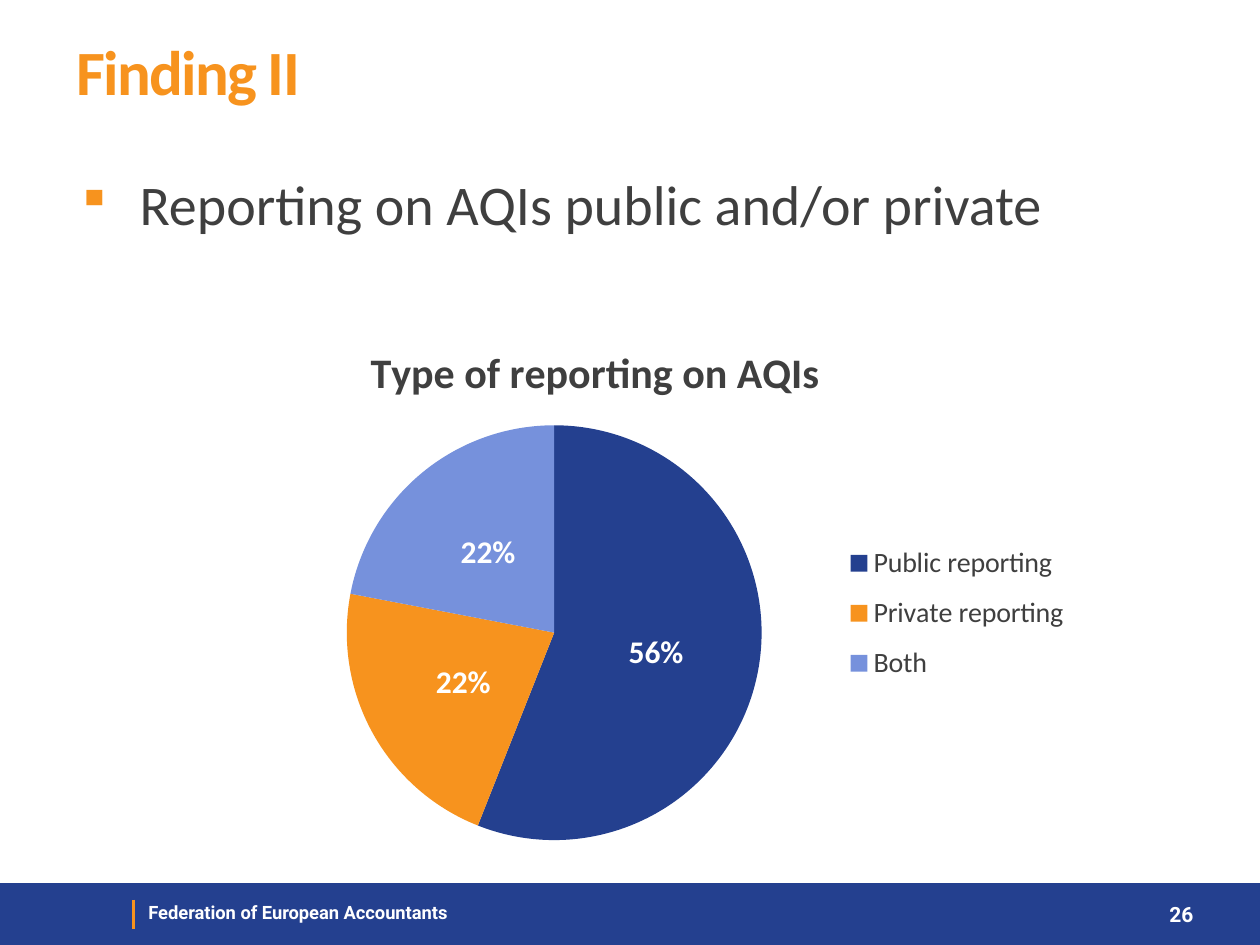
from dataclasses import dataclass

from lxml.etree import SubElement
from pptx import Presentation
from pptx.chart.data import CategoryChartData
from pptx.dml.color import RGBColor
from pptx.enum.chart import XL_CHART_TYPE as ChartType
from pptx.enum.chart import XL_LABEL_POSITION as LabelPosition
from pptx.enum.chart import XL_LEGEND_POSITION as LegendPosition
from pptx.enum.shapes import MSO_CONNECTOR as Connector
from pptx.enum.shapes import MSO_SHAPE as Shape
from pptx.enum.text import MSO_ANCHOR as Anchor
from pptx.enum.text import PP_ALIGN as Align
from pptx.oxml.ns import qn
from pptx.util import Inches, Pt

COLUMNS, ROWS = 100, 75


@dataclass(frozen=True)
class Theme:
    navy: str = "24408F"
    orange: str = "F7931E"
    sky: str = "7691DC"
    ink: str = "3F3F3F"
    white: str = "FFFFFF"
    body_font: str = "Calibri"
    footer_font: str = "Roboto"
    title: float = 36
    body: float = 32
    chart_title: float = 24
    label: float = 18
    legend: float = 16
    number: float = 12
    footer: float = 10.5


def style(font, size, color, name, bold=False):
    font.size, font.name, font.bold = Pt(size), name, bold
    font.color.rgb = RGBColor.from_string(color)


def write(box, text, size, color, name, bold=False, align=Align.LEFT,
          anchor=Anchor.TOP, tracking=None, bullet_color=None):
    """Fill a box with one formatted paragraph."""
    frame = box.text_frame
    frame.word_wrap, frame.vertical_anchor = True, anchor
    para = frame.paragraphs[0]
    para.alignment = align
    if bullet_color:
        para.line_spacing, para.space_after = 1.2, Pt(18)
        add_bullet(para, bullet_color)
    span = para.add_run()
    span.text = text
    style(span.font, size, color, name, bold)
    if tracking is not None:
        span.font._element.set("spc", str(round(tracking * 100)))


def add_bullet(para, color):
    props = para._p.get_or_add_pPr()
    props.set("marL", str(Inches(0.5)))
    props.set("indent", str(Inches(-0.5)))
    SubElement(SubElement(props, qn("a:buClr")), qn("a:srgbClr"), val=color)
    SubElement(props, qn("a:buSzPct"), val="85000")
    SubElement(props, qn("a:buChar"), char="▪")


def place(part, index, **shares):
    """Set a chart part's manual layout, in shares of the chart."""
    for old in part.findall(qn("c:layout")):
        part.remove(old)
    layout = SubElement(part, qn("c:layout"))
    part.insert(index, layout)
    manual = SubElement(layout, qn("c:manualLayout"))
    if part.tag == qn("c:plotArea"):
        SubElement(manual, qn("c:layoutTarget"), val="inner")
    for axis in "xy":
        SubElement(manual, qn(f"c:{axis}Mode"), val="edge")
    for key, share in shares.items():
        SubElement(manual, qn(f"c:{key}"), val=str(share))


class SlideBuilder:
    def __init__(self, deck, theme):
        self.theme = theme
        self.slide = deck.slides.add_slide(deck.slide_layouts[6])
        self.shapes = self.slide.shapes
        self.column = deck.slide_width / COLUMNS
        self.row = deck.slide_height / ROWS

    def area(self, left, top, width, height):
        return (round(left * self.column), round(top * self.row),
                round(width * self.column), round(height * self.row))

    def band(self, area, color):
        band = self.shapes.add_shape(Shape.RECTANGLE, *self.area(*area))
        band.shadow.inherit = False
        band.fill.solid()
        band.fill.fore_color.rgb = RGBColor.from_string(color)
        band.line.fill.background()

    def rule(self, column, top, bottom, color):
        x, y, _, height = self.area(column, top, 0, bottom - top)
        rule = self.shapes.add_connector(Connector.STRAIGHT, x, y, x, y + height)
        rule.line.color.rgb = RGBColor.from_string(color)
        rule.line.width = Pt(1.5)
        SubElement(rule._element.spPr, qn("a:effectLst"))

    def text(self, area, text, **format):
        write(self.shapes.add_textbox(*self.area(*area)), text, **format)

    def pie(self, area, title, shares, colors):
        theme = self.theme
        data = CategoryChartData()
        data.categories = list(shares)
        data.add_series("Series 1", list(shares.values()))
        chart = self.shapes.add_chart(ChartType.PIE, *self.area(*area), data).chart
        style(chart.font, 10, theme.ink, theme.body_font)

        # Title and legend
        chart.has_title = True
        write(chart.chart_title, title, theme.chart_title, theme.ink,
              theme.body_font, bold=True, align=Align.CENTER)
        chart.chart_title.include_in_layout = False
        chart.has_legend = True
        chart.legend.position = LegendPosition.RIGHT
        chart.legend.include_in_layout = False
        style(chart.legend.font, theme.legend, theme.ink, theme.body_font)

        # Slices and percentages
        plot = chart.plots[0]
        plot.vary_by_categories = True
        for index, color in enumerate(colors):
            fill = plot.series[0].points[index].format.fill
            fill.solid()
            fill.fore_color.rgb = RGBColor.from_string(color)
        plot.has_data_labels = True
        labels = plot.data_labels
        labels.show_percentage, labels.show_value = True, False
        labels.number_format, labels.number_format_is_linked = "0%", False
        labels.position = LabelPosition.CENTER
        style(labels.font, theme.label, theme.white, theme.body_font, bold=True)

        # Layout inside the chart
        root = chart.element.find(qn("c:chart"))
        place(root.find(qn("c:title")), 1, x=0.11, y=0.06)
        place(root.find(qn("c:plotArea")), 0, x=0.09, y=0.22, w=0.51, h=0.75)
        place(root.find(qn("c:legend")), 1, x=0.7, y=0.41, w=0.28, h=0.3)


def main():
    deck = Presentation()
    deck.slide_width, deck.slide_height = Inches(10), Inches(7.5)
    theme = Theme()
    page = SlideBuilder(deck, theme)

    # Footer
    page.band((0, 70.1, COLUMNS, 4.9), theme.navy)
    page.text((10.8, 71, 37, 2.9), "Federation of European Accountants",
              size=theme.footer, color=theme.white, name=theme.footer_font, bold=True)
    page.rule(10.6, 71.4, 73.7, theme.orange)
    page.text((89.4, 70.1, 6.3, 4.9), "26", size=theme.number, color=theme.white,
              name=theme.footer_font, bold=True, align=Align.RIGHT,
              anchor=Anchor.MIDDLE)

    # Heading and statement
    page.text((5.1, 0.2, 90, 10.8), "Finding II", size=theme.title,
              color=theme.orange, name=theme.body_font, bold=True,
              anchor=Anchor.MIDDLE, tracking=-1)
    page.text((5.1, 11.9, 90, 16.1), "Reporting on AQIs public and/or private",
              size=theme.body, color=theme.ink, name=theme.body_font,
              bullet_color=theme.orange)

    # Pie chart
    page.pie((21.7, 24.1, 64.6, 43.9), "Type of reporting on AQIs",
             {"Public reporting": 56, "Private reporting": 22, "Both": 22},
             (theme.navy, theme.orange, theme.sky))

    deck.save("out.pptx")


if __name__ == "__main__":
    main()
